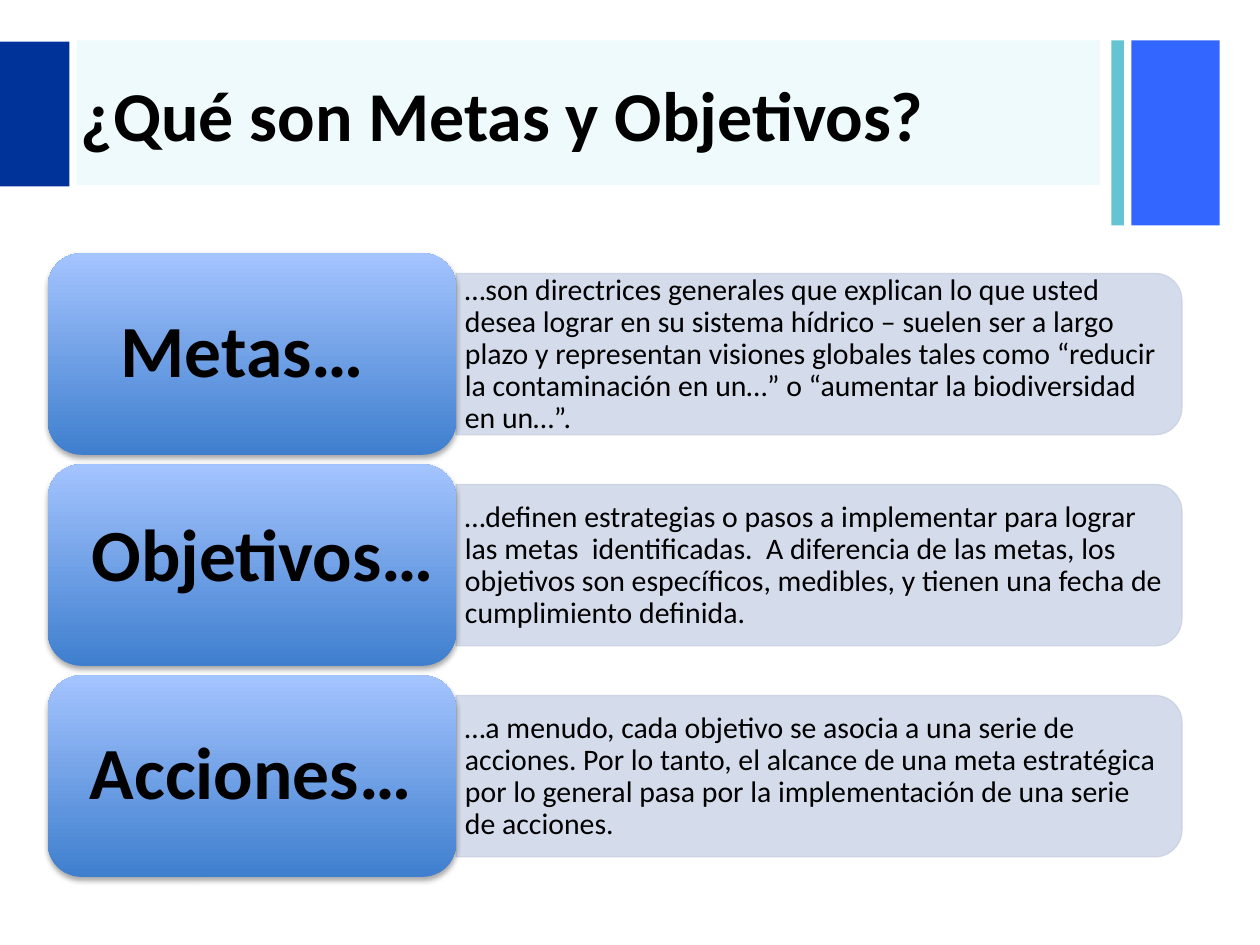
from dataclasses import dataclass

from lxml import etree
from pptx import Presentation
from pptx.dml.color import RGBColor
from pptx.enum import shapes, text
from pptx.oxml import ns
from pptx.util import Inches, Pt


@dataclass(frozen=True)
class Theme:
    font: str = "Calibri"
    ink: str = "000000"
    navy: str = "003399"
    blue: str = "3366FF"
    teal: str = "65C4D2"
    banner: str = "14C5D0"
    bar: str = "D0D8E8"
    bar_line: str = "CBD3E3"
    card_bottom: str = "3F7FCE"
    card_top: str = "A4C4FF"
    title_size: int = 40
    term_size: int = 42
    body_size: int = 17


@dataclass(frozen=True)
class Box:
    left: float
    top: float
    width: float
    height: float

    def lengths(self) -> tuple:
        return tuple(Inches(v) for v in (self.left, self.top, self.width, self.height))


@dataclass(frozen=True)
class Concept:
    term: str
    definition: str
    term_box: Box  # top is measured from the top of the row


THEME = Theme()
FIRST_ROW, ROW_PITCH = 2.01, 1.675
SHAPE = shapes.MSO_SHAPE
ALIGN = text.PP_ALIGN

CONCEPTS = (
    Concept("Metas… ",
            "…son directrices generales que explican lo que usted desea lograr en su "
            "sistema hídrico – suelen ser a largo plazo y representan visiones globales "
            "tales como “reducir la contaminación en un…” o “aumentar la biodiversidad "
            "en un…”.",
            Box(0.45, 0.08, 3.08, 1.44)),
    Concept("Objetivos…",
            "…definen estrategias o pasos a implementar para lograr las metas  "
            "identificadas.  A diferencia de las metas, los objetivos son específicos, "
            "medibles, y tienen una fecha de cumplimiento definida.",
            Box(0.38, 0.02, 3.41, 1.44)),
    Concept("Acciones…",
            "…a menudo, cada objetivo se asocia a una serie de acciones. Por lo tanto, "
            "el alcance de una meta estratégica por lo general pasa por la "
            "implementación de una serie de acciones.",
            Box(0.45, 0.08, 3.08, 1.44)),
)


def set_alpha(color_parent, percent: int) -> None:
    """Make the solid colour below an element partly transparent."""
    color = color_parent.find(".//" + ns.qn("a:srgbClr"))
    etree.SubElement(color, ns.qn("a:alpha"), val=str(percent * 1000))


def add_block(slide, box: Box, color: str | None = None, kind=SHAPE.RECTANGLE,
              alpha: int = 100):
    shape = slide.shapes.add_shape(kind, *box.lengths())
    shape.shadow.inherit = False
    shape.line.fill.background()
    if color:
        shape.fill.solid()
        shape.fill.fore_color.rgb = RGBColor.from_string(color)
        if alpha < 100:
            set_alpha(shape.fill._xPr.find(ns.qn("a:solidFill")), alpha)
    return shape


def write_text(shape, words: str, *, size: int, bold: bool = False, align=ALIGN.LEFT,
               insets: tuple = (0.1, 0.05), line_spacing: float = 1.0) -> None:
    frame = shape.text_frame
    frame.word_wrap = True
    frame.auto_size = text.MSO_AUTO_SIZE.NONE
    frame.vertical_anchor = text.MSO_ANCHOR.MIDDLE
    frame.margin_left = frame.margin_right = Inches(insets[0])
    frame.margin_top = frame.margin_bottom = Inches(insets[1])
    paragraph = frame.paragraphs[0]
    paragraph.alignment = align
    paragraph.line_spacing = line_spacing
    run = paragraph.add_run()
    run.text = words
    run.font.name = THEME.font
    run.font.size = Pt(size)
    run.font.bold = bold
    run.font.color.rgb = RGBColor.from_string(THEME.ink)


def add_card_shadow(shape) -> None:
    effects = shape._element.spPr.find(ns.qn("a:effectLst"))
    shadow = etree.SubElement(effects, ns.qn("a:outerShdw"), blurRad=str(Pt(3.1)),
                              dist=str(Pt(1.8)), dir="5400000", rotWithShape="0")
    color = etree.SubElement(shadow, ns.qn("a:srgbClr"), val="000000")
    etree.SubElement(color, ns.qn("a:alpha"), val="35000")


def add_definition(slide, concept: Concept, top: float) -> None:
    # Upright shape turned a quarter so that its round corners face right
    bar = add_block(slide, Box(5.86, top - 2.08, 1.28, 5.76), THEME.bar,
                    SHAPE.ROUND_2_SAME_RECTANGLE, alpha=90)
    bar.rotation = 90
    bar.line.color.rgb = RGBColor.from_string(THEME.bar_line)
    bar.line.width = Pt(0.75)
    set_alpha(bar.line._ln, 90)
    label = slide.shapes.add_textbox(*Box(3.62, top + 0.23, 5.7, 1.15).lengths())
    write_text(label, concept.definition, size=THEME.body_size,
               insets=(0.07, 0.04), line_spacing=0.9)


def add_term(slide, concept: Concept, top: float) -> None:
    card = add_block(slide, Box(0.38, top, 3.24, 1.6), kind=SHAPE.ROUNDED_RECTANGLE)
    card.fill.gradient()
    card.fill.gradient_angle = 90
    for stop, color in zip(card.fill.gradient_stops, (THEME.card_bottom, THEME.card_top)):
        stop.color.rgb = RGBColor.from_string(color)
    add_card_shadow(card)
    box = concept.term_box
    label = slide.shapes.add_textbox(
        *Box(box.left, top + box.top, box.width, box.height).lengths())
    write_text(label, concept.term, size=THEME.term_size, bold=True, align=ALIGN.CENTER,
               insets=(0.17, 0.09), line_spacing=0.9)


def main() -> None:
    presentation = Presentation()
    presentation.slide_width, presentation.slide_height = Inches(10), Inches(7.5)
    slide = presentation.slides.add_slide(presentation.slide_layouts[5])

    # Header band
    add_block(slide, Box(8.98, 0.32, 0.7, 1.47), THEME.blue)
    add_block(slide, Box(8.82, 0.32, 0.1, 1.47), THEME.teal)
    add_block(slide, Box(0.61, 0.32, 8.12, 1.15), THEME.banner, alpha=7)
    add_block(slide, Box(0, 0.33, 0.55, 1.15), THEME.navy)

    # Title, brought in front of the band
    title = slide.shapes.title
    title.left, title.top, title.width, title.height = Box(0.54, 0.34, 8.27, 1.12).lengths()
    write_text(title, "¿Qué son Metas y Objetivos?", size=THEME.title_size, bold=True)
    slide.shapes._spTree.append(title._element)

    # One row per concept
    for row, concept in enumerate(CONCEPTS):
        top = FIRST_ROW + row * ROW_PITCH
        add_definition(slide, concept, top)
        add_term(slide, concept, top)

    presentation.save("out.pptx")


if __name__ == "__main__":
    main()
